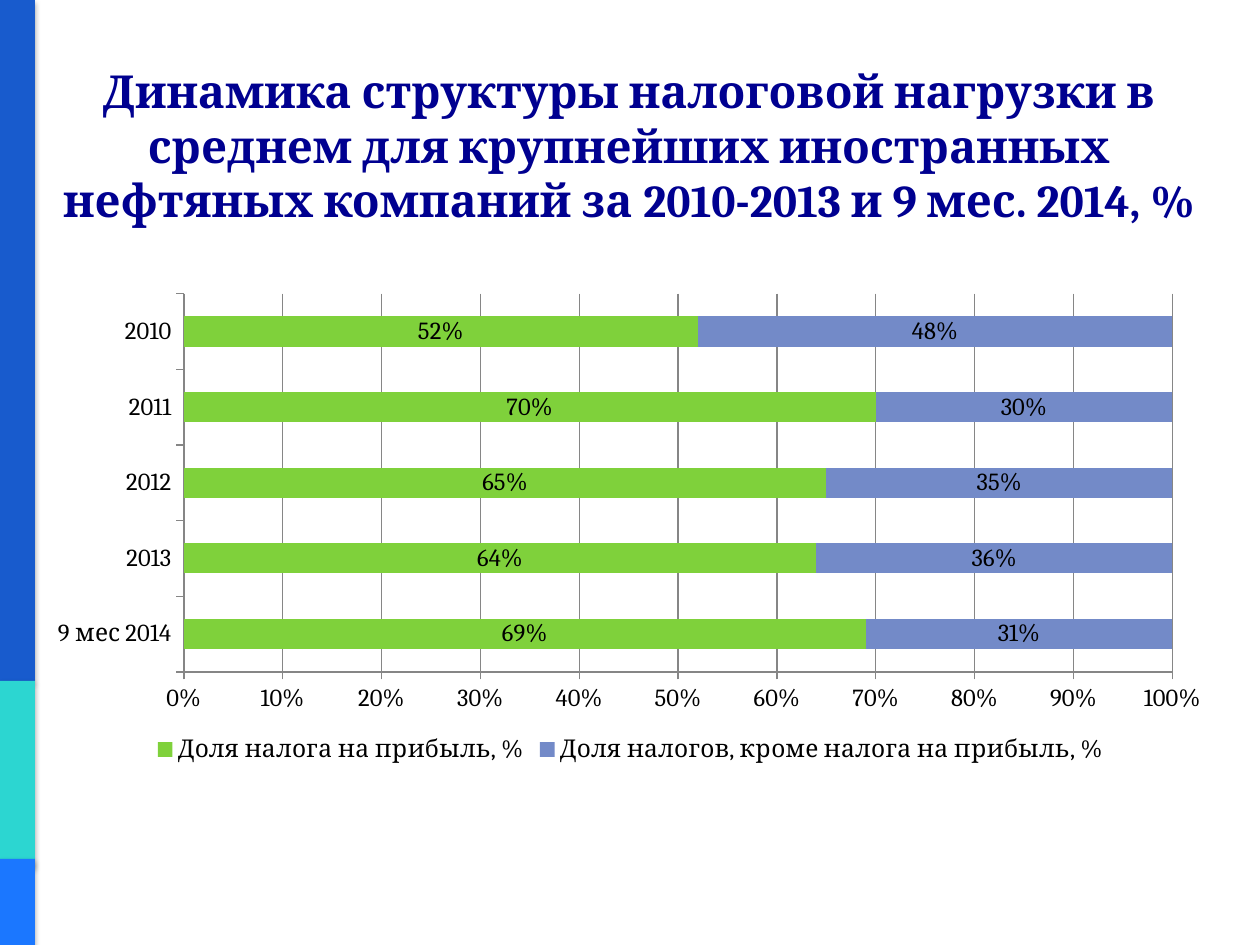
from lxml import etree
from pptx import Presentation
from pptx.chart.data import CategoryChartData
from pptx.dml.color import RGBColor
from pptx.enum.chart import XL_CHART_TYPE, XL_LABEL_POSITION, XL_LEGEND_POSITION, XL_TICK_MARK
from pptx.enum.shapes import MSO_SHAPE
from pptx.enum.text import MSO_ANCHOR, MSO_AUTO_SIZE, PP_ALIGN
from pptx.oxml import parse_xml
from pptx.oxml.ns import qn
from pptx.util import Emu, Pt

RECT = MSO_SHAPE.RECTANGLE
BAR_STACKED = XL_CHART_TYPE.BAR_STACKED
LABEL_CENTER = XL_LABEL_POSITION.CENTER
LEGEND_BOTTOM = XL_LEGEND_POSITION.BOTTOM
TICK_OUT = XL_TICK_MARK.OUTSIDE
MIDDLE = MSO_ANCHOR.MIDDLE
NO_FIT = MSO_AUTO_SIZE.NONE
CENTER = PP_ALIGN.CENTER

PX_PER_INCH = 126
FONT = "Cambria"
SHADOW = """<a:effectLst xmlns:a="http://schemas.openxmlformats.org/drawingml/2006/main">
<a:outerShdw blurRad="39370" dist="22860" dir="5400000" rotWithShape="0">
<a:srgbClr val="000000"><a:alpha val="35000"/></a:srgbClr></a:outerShdw></a:effectLst>"""


def px(n):
    return Emu(round(n * 914400 / PX_PER_INCH))


def rgb(value):
    return RGBColor.from_string(value)


class SlideBuilder:
    title_color = "000090"
    text_color = "000000"
    grid_color = "868686"

    def __init__(self, prs):
        self.s = prs.slides.add_slide(prs.slide_layouts[5])

    def font(self, font, size, color, bold=False):
        font.name = FONT
        font.size = Pt(size)
        font.bold = bold
        font.color.rgb = rgb(color)

    def title(self, text, x, y, w, h):
        sp = self.s.shapes.title
        sp.left, sp.top, sp.width, sp.height = map(px, (x, y, w, h))
        tf = sp.text_frame
        tf.word_wrap = True
        tf.auto_size = NO_FIT
        tf.vertical_anchor = MIDDLE
        p = tf.paragraphs[0]
        p.text = text
        p.alignment = CENTER
        self.font(p.font, 26, self.title_color, True)

    def band(self, x, y, w, h, color):
        sp = self.s.shapes.add_shape(RECT, *map(px, (x, y, w, h)))
        sp.fill.solid()
        sp.fill.fore_color.rgb = rgb(color)
        sp.line.fill.background()
        sp._element.spPr.append(parse_xml(SHADOW))

    def plot_layout(self, chart, **fractions):
        area = chart._chartSpace.chart.plotArea
        for old in area.findall(qn("c:layout")):
            area.remove(old)
        layout = etree.Element(qn("c:layout"))
        manual = etree.SubElement(layout, qn("c:manualLayout"))
        settings = {"layoutTarget": "inner", "xMode": "edge", "yMode": "edge", **fractions}
        for name, value in settings.items():
            etree.SubElement(manual, qn(f"c:{name}")).set("val", str(value))
        area.insert(0, layout)

    def stacked_bars(self, categories, series, x, y, w, h):
        data = CategoryChartData(number_format="0%")
        data.categories = categories
        for name, values, _ in series:
            data.add_series(name, values)
        chart = self.s.shapes.add_chart(BAR_STACKED, *map(px, (x, y, w, h)), data).chart
        self.font(chart.font, 14, self.text_color)
        chart.has_title = False
        chart.has_legend = True
        chart.legend.position = LEGEND_BOTTOM
        chart.legend.include_in_layout = False

        plot = chart.plots[0]
        plot.gap_width = 150
        plot.overlap = 100
        plot.vary_by_categories = False
        for item, (_, _, color) in zip(plot.series, series):
            item.format.fill.solid()
            item.format.fill.fore_color.rgb = rgb(color)
            labels = item.data_labels
            labels.show_value = True
            labels.number_format = "0%"
            labels.number_format_is_linked = False
            labels.position = LABEL_CENTER
            self.font(labels.font, 14, self.text_color)

        axis = chart.value_axis
        axis.minimum_scale = 0
        axis.maximum_scale = 1
        axis.major_unit = 0.1
        axis.has_major_gridlines = True
        axis.tick_labels.number_format = "0%"
        axis.tick_labels.number_format_is_linked = False
        for line in (axis.major_gridlines.format.line, axis.format.line,
                     chart.category_axis.format.line):
            line.color.rgb = rgb(self.grid_color)
            line.width = Pt(0.75)
        for each in (axis, chart.category_axis):
            each.major_tick_mark = TICK_OUT
        self.plot_layout(chart, x=0.125, y=0.02, w=0.83, h=0.78)


def main():
    prs = Presentation()
    prs.slide_width = px(1260)
    prs.slide_height = px(945)
    slide = SlideBuilder(prs)

    for top, height, color in (
        (0, 681, "185BCD"), (681, 186, "2CD6D1"), (859, 90, "1B77FF"),
    ):
        slide.band(0, top, 35, height, color)

    slide.title(
        "Динамика структуры налоговой нагрузки в среднем для крупнейших иностранных "
        "нефтяных компаний за 2010-2013 и 9 мес. 2014, %",
        44, 46, 1171, 198)

    slide.stacked_bars(
        ["9 мес 2014", "2013", "2012", "2011", "2010"],
        [
            ("Доля налога на прибыль, %", (0.69, 0.64, 0.65, 0.7, 0.52), "7FD13B"),
            ("Доля налогов, кроме налога на прибыль, %",
             (0.31, 0.36, 0.35, 0.3, 0.48), "738AC8"),
        ],
        35, 284, 1191, 485)

    prs.save("out.pptx")


if __name__ == "__main__":
    main()
